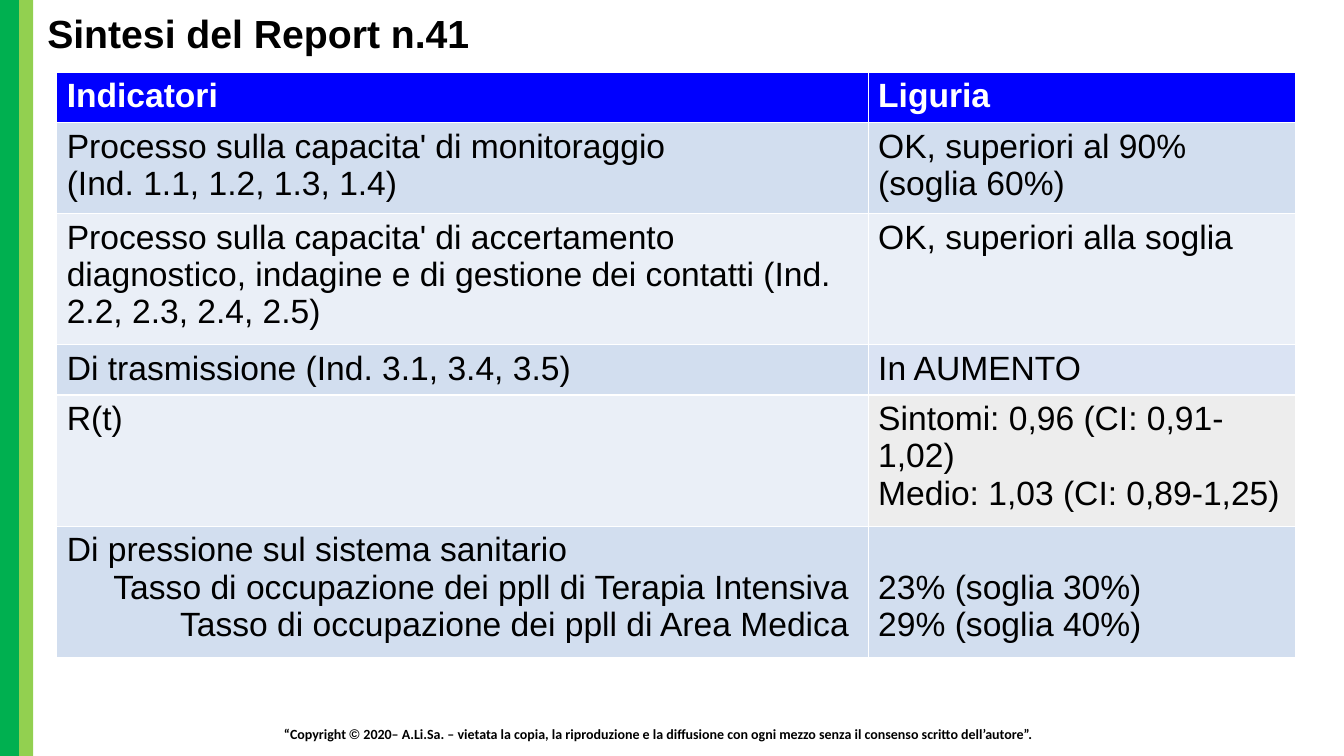
"""Builds the summary slide of Report n.41 with the Liguria indicator table."""
from pptx import Presentation
from pptx.dml.color import RGBColor
from pptx.enum.shapes import MSO_SHAPE
from pptx.enum.text import MSO_ANCHOR, PP_ALIGN
from pptx.util import Pt

LEFT, RIGHT = PP_ALIGN.LEFT, PP_ALIGN.RIGHT
MIDDLE = MSO_ANCHOR.MIDDLE
RECT = MSO_SHAPE.RECTANGLE

COLORS = {
    "green": "00B050", "lime": "92D050", "header": "0000FF", "band": "D2DEEF",
    "light": "EAEFF7", "rising": "DAE3F3", "grey": "EDEDED",
    "black": "000000", "white": "FFFFFF",
}
TITLE = "Sintesi del Report n.41"
COPYRIGHT = [
    ("“Copyright ", "Calibri"),
    ("© ", "Arial"),
    ("2020– A.Li.Sa. – vietata la copia, la riproduzione e la diffusione con "
     "ogni mezzo senza il consenso scritto dell’autore”.", "Calibri"),
]
STRIPS = [(0, 13.7, "green"), (13.7, 10, "lime")]
ROWS = [
    (1, (["Indicatori"], "header"), (["Liguria"], "header")),
    (2, (["Processo sulla capacita' di monitoraggio", "(Ind. 1.1, 1.2, 1.3, 1.4)"], "band"),
     (["OK, superiori al 90% (soglia 60%)"], "band")),
    (3, (["Processo sulla capacita' di accertamento diagnostico, indagine e di "
          "gestione dei contatti (Ind. 2.2, 2.3, 2.4, 2.5)"], "light"),
     (["OK, superiori alla soglia"], "light")),
    (1, (["Di trasmissione (Ind. 3.1, 3.4, 3.5)"], "band"), (["In AUMENTO"], "rising")),
    (3, (["R(t)"], "light"),
     (["Sintomi: 0,96 (CI: 0,91-1,02)", "Medio: 1,03 (CI: 0,89-1,25)"], "grey")),
    (3, (["Di pressione sul sistema sanitario",
          "Tasso di occupazione dei ppll di Terapia Intensiva",
          "Tasso di occupazione dei ppll di Area Medica"], "band"),
     (["23% (soglia 30%)", "29% (soglia 40%)"], "band")),
]
COL_WIDTHS = (579.6, 305.3)
LINE_HEIGHT, CELL_PAD, LINE_PITCH = 28.8, 3.6, 26.8


def rgb(name):
    """Return the named colour."""
    return RGBColor.from_string(COLORS[name])


def add_text(p, text, size=24, font="Arial", color="black", bold=False, align=LEFT):
    """Append a formatted run to a paragraph."""
    p.alignment = align
    r = p.add_run()
    r.text = text
    r.font.size, r.font.name, r.font.bold = Pt(size), font, bold
    r.font.color.rgb = rgb(color)


def add_strips(s):
    """Draw the two vertical green strips."""
    for left, width, color in STRIPS:
        sp = s.shapes.add_shape(RECT, Pt(left), 0, Pt(width), Pt(540))
        sp.shadow.inherit = False
        sp.fill.solid()
        sp.fill.fore_color.rgb = rgb(color)
        sp.line.fill.background()


def add_title(s):
    """Place and fill the title."""
    sp = s.shapes.title
    sp.left, sp.top, sp.width, sp.height = Pt(26.6), 0, Pt(933), Pt(51.8)
    tf = sp.text_frame
    tf.vertical_anchor = MIDDLE
    tf.paragraphs[0].line_spacing = 0.9
    add_text(tf.paragraphs[0], TITLE, size=28, bold=True)


def add_indicators(s):
    """Add the indicator table."""
    heights = [2 * CELL_PAD + LINE_HEIGHT * lines for lines, *_ in ROWS]
    frame = s.shapes.add_table(len(ROWS), len(COL_WIDTHS), Pt(40.5), Pt(51.8),
                               Pt(sum(COL_WIDTHS)), Pt(sum(heights)))
    table = frame.table
    for col, width in zip(table.columns, COL_WIDTHS):
        col.width = Pt(width)
    for i, (_, *cells) in enumerate(ROWS):
        table.rows[i].height = Pt(heights[i])
        header = i == 0
        for j, (lines, fill) in enumerate(cells):
            cell = table.cell(i, j)
            cell.fill.solid()
            cell.fill.fore_color.rgb = rgb(fill)
            tf = cell.text_frame
            for k, line in enumerate(lines):
                p = tf.add_paragraph() if k else tf.paragraphs[0]
                rate = i == len(ROWS) - 1 and j == 0 and k > 0
                add_text(p, line, color="white" if header else "black",
                         bold=header, align=RIGHT if rate else LEFT)
    pressure, rates = table.rows[len(ROWS) - 1].cells
    pressure.margin_right = Pt(13.9)
    rates.margin_top = Pt(CELL_PAD + LINE_PITCH)


def add_copyright(s):
    """Add the copyright line."""
    tf = s.shapes.add_textbox(Pt(195.8), Pt(514.8), Pt(568.8), Pt(19.4)).text_frame
    tf.word_wrap = True
    for text, font in COPYRIGHT:
        add_text(tf.paragraphs[0], text, size=10, font=font, bold=True)


def main():
    """Build and save the slide."""
    prs = Presentation()
    prs.slide_width, prs.slide_height = Pt(960), Pt(540)
    s = prs.slides.add_slide(prs.slide_layouts[5])
    add_strips(s)
    add_title(s)
    add_indicators(s)
    add_copyright(s)
    prs.save("out.pptx")


if __name__ == "__main__":
    main()
